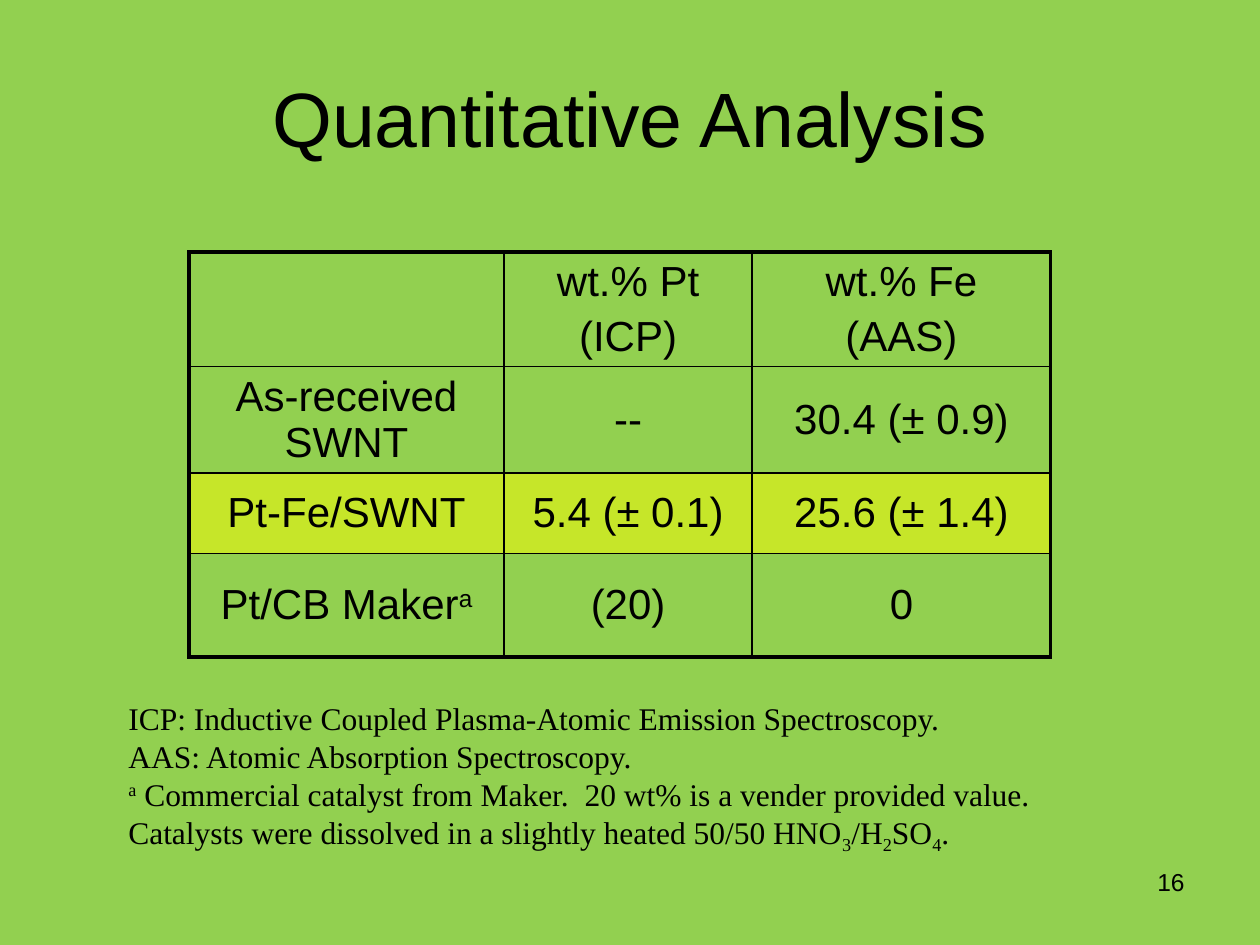
"""Build the Quantitative Analysis slide with its composition table and notes."""
import dataclasses
import typing

import pptx
import pptx.dml.color
import pptx.enum.text
import pptx.oxml
import pptx.oxml.ns
import pptx.util

ALIGN = pptx.enum.text.PP_ALIGN
ANCHOR = pptx.enum.text.MSO_ANCHOR


@dataclasses.dataclass(frozen=True)
class Theme:
    background: str = "92D050"
    ink: str = "000000"
    highlight: str = "FFFF00"
    highlight_alpha: int = 48
    sans: str = "Arial"
    serif: str = "Times New Roman"
    title: int = 44
    table: int = 24
    notes: int = 18
    number: int = 14
    outer_line: float = 2.25
    inner_line: float = 1


class Run(typing.NamedTuple):
    text: str
    baseline: int = 0


class Box(typing.NamedTuple):
    left: float
    top: float
    width: float
    height: float


@dataclasses.dataclass(frozen=True)
class Style:
    size: int
    font: str
    align: ALIGN = ALIGN.LEFT
    before: float = 0


@dataclasses.dataclass(frozen=True)
class TextBlock:
    box: Box
    paragraphs: list
    style: Style
    anchor: ANCHOR = ANCHOR.TOP


THEME = Theme()
WIDTH, HEIGHT = 10, 7.5
COLUMNS = [2.5, 1.97, 2.37]
ROWS = [0.9, 0.84, 0.64, 0.82]
HIGHLIGHT_ROW = 2
TABLE_BOX = Box(0.15, 2 / HEIGHT, sum(COLUMNS) / WIDTH, sum(ROWS) / HEIGHT)
CELL_STYLE = Style(THEME.table, THEME.sans, ALIGN.CENTER, 0.2 * THEME.table)

CELLS = [
    [[], ["wt.% Pt", "(ICP)"], ["wt.% Fe", "(AAS)"]],
    [["As-received SWNT"], ["--"], ["30.4 (± 0.9)"]],
    [["Pt-Fe/SWNT"], ["5.4 (± 0.1)"], ["25.6 (± 1.4)"]],
    [[[Run("Pt/CB Maker"), Run("a", 30)]], ["(20)"], ["0"]],
]

NOTES = [
    "ICP: Inductive Coupled Plasma-Atomic Emission Spectroscopy.",
    "AAS: Atomic Absorption Spectroscopy.",
    [Run("a", 30), Run(" Commercial catalyst from Maker.  20 wt% is a vender provided value.")],
    [Run("Catalysts were dissolved in a slightly heated 50/50 HNO"), Run("3", -25),
     Run("/H"), Run("2", -25), Run("SO"), Run("4", -25), Run(".")],
]

BLOCKS = [
    TextBlock(Box(0.05, 0.04, 0.9, 1.25 / HEIGHT), ["Quantitative Analysis"],
              Style(THEME.title, THEME.sans, ALIGN.CENTER), ANCHOR.MIDDLE),
    TextBlock(Box(0.717, 6.83 / HEIGHT, 0.233, 0.07), ["16"],
              Style(THEME.number, THEME.sans, ALIGN.RIGHT)),
    TextBlock(Box(0.092, 5.5 / HEIGHT, 0.792, 1.31 / HEIGHT), NOTES,
              Style(THEME.notes, THEME.serif)),
]


def rgb(value: str) -> pptx.dml.color.RGBColor:
    """Return a colour object for a hex value."""
    return pptx.dml.color.RGBColor.from_string(value)


def place(box: Box) -> list:
    """Turn shares of the slide into lengths."""
    return [pptx.util.Inches(share * side) for share, side in zip(box, (WIDTH, HEIGHT) * 2)]


def write(tf, paragraphs: list, style: Style) -> None:
    """Fill a text frame with styled paragraphs."""
    for i, content in enumerate(paragraphs):
        p = tf.add_paragraph() if i else tf.paragraphs[0]
        p.alignment = style.align
        p.space_before = pptx.util.Pt(style.before)
        for run in [Run(content)] if isinstance(content, str) else content:
            r = p.add_run()
            r.text = run.text
            values = {"name": style.font, "size": pptx.util.Pt(style.size)}
            for key, value in values.items():
                setattr(r.font, key, value)
            r.font.color.rgb = rgb(THEME.ink)
            if run.baseline:
                r.font._element.set("baseline", str(run.baseline * 1000))


def add_text(s, block: TextBlock) -> None:
    """Add one wrapped text box."""
    tf = s.shapes.add_textbox(*place(block.box)).text_frame
    for key, value in {"word_wrap": True, "vertical_anchor": block.anchor}.items():
        setattr(tf, key, value)
    write(tf, block.paragraphs, block.style)


def set_borders(cell, outer: dict) -> None:
    """Draw the four cell sides, heavier on the table's edge."""
    tc_pr = cell._tc.get_or_add_tcPr()
    for i, (side, is_outer) in enumerate(outer.items()):
        width = pptx.util.Pt(THEME.outer_line if is_outer else THEME.inner_line)
        tc_pr.insert(i, pptx.oxml.parse_xml(
            f'<a:ln{side} {pptx.oxml.ns.nsdecls("a")} w="{width}"><a:solidFill>'
            f'<a:srgbClr val="{THEME.ink}"/></a:solidFill></a:ln{side}>'))


def fill_cell(cell, highlighted: bool) -> None:
    """Clear the cell's fill or tint it with the highlight."""
    if not highlighted:
        cell.fill.background()
        return
    cell.fill.solid()
    cell.fill.fore_color.rgb = rgb(THEME.highlight)
    color = cell._tc.tcPr.find(".//" + pptx.oxml.ns.qn("a:srgbClr"))
    color.append(pptx.oxml.parse_xml(
        f'<a:alpha {pptx.oxml.ns.nsdecls("a")} val="{THEME.highlight_alpha * 1000}"/>'))


def add_results(s) -> None:
    """Add the composition table."""
    table = s.shapes.add_table(len(ROWS), len(COLUMNS), *place(TABLE_BOX)).table
    for key in ("first_row", "horz_banding"):
        setattr(table, key, False)
    for column, width in zip(table.columns, COLUMNS):
        column.width = pptx.util.Inches(width)
    for row, height in zip(table.rows, ROWS):
        row.height = pptx.util.Inches(height)
    for i, row in enumerate(CELLS):
        for j, paragraphs in enumerate(row):
            cell = table.cell(i, j)
            cell.vertical_anchor = ANCHOR.MIDDLE
            write(cell.text_frame, paragraphs, CELL_STYLE)
            fill_cell(cell, i == HIGHLIGHT_ROW)
            set_borders(cell, {"L": j == 0, "R": j == len(COLUMNS) - 1,
                               "T": i == 0, "B": i == len(ROWS) - 1})


def main() -> None:
    """Create and save the presentation."""
    prs = pptx.Presentation()
    prs.slide_width, prs.slide_height = pptx.util.Inches(WIDTH), pptx.util.Inches(HEIGHT)
    s = prs.slides.add_slide(prs.slide_layouts[6])
    s.background.fill.solid()
    s.background.fill.fore_color.rgb = rgb(THEME.background)
    add_results(s)
    for block in BLOCKS:
        add_text(s, block)
    prs.save("out.pptx")


if __name__ == "__main__":
    main()
